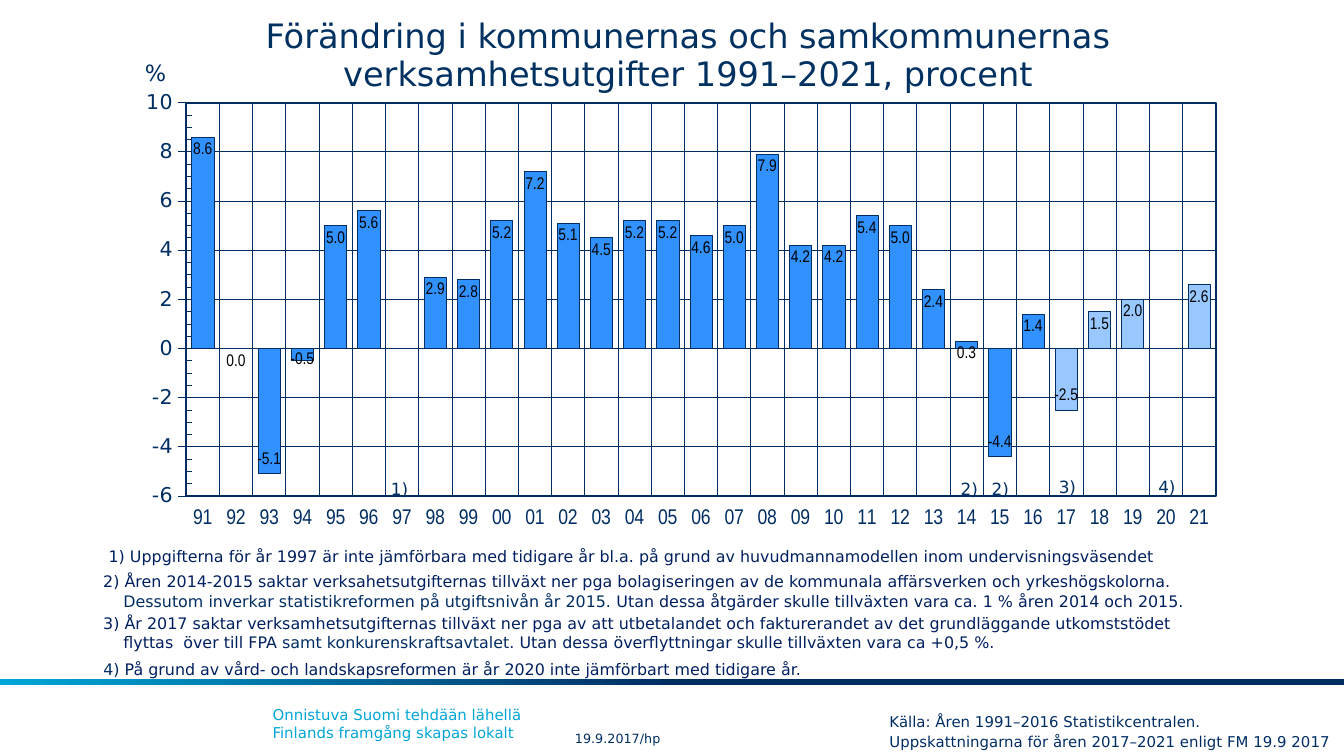
from typing import NamedTuple

from lxml import etree
from pptx import Presentation
from pptx.chart.data import CategoryChartData
from pptx.dml.color import RGBColor
from pptx.enum.chart import (XL_CHART_TYPE, XL_LABEL_POSITION,
                             XL_TICK_LABEL_POSITION, XL_TICK_MARK)
from pptx.enum.dml import MSO_LINE
from pptx.enum.shapes import MSO_SHAPE
from pptx.enum.text import MSO_ANCHOR, PP_ALIGN
from pptx.util import Inches, Pt

NAVY = RGBColor(0x00, 0x2E, 0x63)
INK = RGBColor(0x00, 0x20, 0x60)
TITLE = RGBColor(0x00, 0x31, 0x61)
CYAN = RGBColor(0x00, 0xA6, 0xD6)
BLUE = RGBColor(0x31, 0x91, 0xFF)
PALE = RGBColor(0x98, 0xC8, 0xFF)
BLACK = RGBColor(0, 0, 0)
SANS, NARROW = "DejaVu Sans", "Arial Narrow"

STACKED = XL_CHART_TYPE.COLUMN_STACKED
IN_END = XL_LABEL_POSITION.INSIDE_END
LOW = XL_TICK_LABEL_POSITION.LOW
OUT, INSIDE = XL_TICK_MARK.OUTSIDE, XL_TICK_MARK.INSIDE
DOT = MSO_LINE.ROUND_DOT
RECT = MSO_SHAPE.RECTANGLE
TOP, BOTTOM = MSO_ANCHOR.TOP, MSO_ANCHOR.BOTTOM
LEFT, CENTER = PP_ALIGN.LEFT, PP_ALIGN.CENTER

C = "http://schemas.openxmlformats.org/drawingml/2006/chart"
A = "http://schemas.openxmlformats.org/drawingml/2006/main"

YEARS = [f"{year % 100:02}" for year in range(1991, 2022)]
RATES = [8.6, 0, -5.1, -0.5, 5, 5.6, None, 2.9, 2.8, 5.2, 7.2, 5.1, 4.5, 5.2,
         5.2, 4.6, 5, 7.9, 4.2, 4.2, 5.4, 5, 2.4, 0.3, -4.4, 1.4, -2.5, 1.5,
         2, None, 2.6]
FORECAST = YEARS.index("17")


class Box(NamedTuple):
    x: float
    y: float
    w: float
    h: float


class Run(NamedTuple):
    text: str
    color: RGBColor = INK


class Note(NamedTuple):
    box: Box
    lines: list[list[Run]]
    anchor: MSO_ANCHOR = TOP


class Mark(NamedTuple):
    text: str
    x: float
    y: float = 3.51


MARKS = [Mark("1)", 2.81), Mark("2)", 7.05), Mark("2)", 7.28),
         Mark("3)", 7.78, 3.5), Mark("4)", 8.52, 3.5)]

NOTES = [
    Note(Box(0.71, 4.02, 8.72, 0.25), [
        [Run("1) Uppgifterna för år 1997 är inte jämförbara med tidigare år bl.a. "
             "på grund av huvudmannamodellen inom undervisningsväsendet")]]),
    Note(Box(0.67, 4.23, 8.86, 0.36), [
        [Run("2) Åren 2014-2015 saktar verksahetsutgifternas tillväxt ner pga "
             "bolagiseringen av de kommunala affärsverken och yrkeshögskolorna.")],
        [Run("Dessutom inverkar statistikreformen på utgiftsnivån år 2015. ", NAVY),
         Run("Utan dessa åtgärder skulle tillväxten vara ca. 1 % åren 2014 och 2015.")],
    ], BOTTOM),
    Note(Box(0.67, 4.54, 8.93, 0.36), [
        [Run("3) År 2017 saktar verksamhetsutgifternas tillväxt ner pga av att "
             "utbetalandet och fakturerandet av det grundläggande utkomststödet")],
        [Run("flyttas  över till FPA "), Run("samt konkurenskraftsavtalet. ", NAVY),
         Run("Utan dessa överflyttningar skulle tillväxten vara ca +0,5 %.")],
    ], BOTTOM),
    Note(Box(0.67, 4.86, 6.95, 0.25), [
        [Run("4) ", NAVY),
         Run("På grund av vård- och landskapsreformen är år 2020 inte jämförbart "
             "med tidigare år.")]]),
]


def place(box: Box) -> list[int]:
    return [Inches(side) for side in box]


def write(slide, box: Box, lines: list[list[Run]], *, size: float,
          align=LEFT, anchor=TOP, wrap: bool = True, space: float = 1,
          inset: bool = True, hang: float = 0) -> None:
    """Add a text box; hang indents every line after the first."""
    frame = slide.shapes.add_textbox(*place(box)).text_frame
    frame.word_wrap = wrap
    frame.vertical_anchor = anchor
    if not inset:
        frame.margin_left = frame.margin_right = 0
        frame.margin_top = frame.margin_bottom = 0
    for i, line in enumerate(lines):
        para = frame.add_paragraph() if i else frame.paragraphs[0]
        para.alignment = align
        para.line_spacing = space
        if i and hang:
            para._p.get_or_add_pPr().set("marL", str(Inches(hang)))
        for part in line:
            for j, text in enumerate(part.text.split("\n")):
                if j:
                    para.add_line_break()
                run = para.add_run()
                run.text = text
                style(run.font, size, SANS, part.color)


def style(font, size: float, name: str, color: RGBColor) -> None:
    font.size = Pt(size)
    font.name = name
    font.bold = False
    font.color.rgb = color


def rule(line) -> None:
    line.color.rgb = NAVY
    line.width = Pt(0.25)


def dress(axis, size: float, name: str) -> None:
    """Set the font, line, ticks and grid of an axis."""
    style(axis.tick_labels.font, size, name, NAVY)
    rule(axis.format.line)
    axis.major_tick_mark = OUT
    axis.has_major_gridlines = True
    grid = axis.major_gridlines.format.line
    rule(grid)
    grid.dash_style = DOT


def layout(**spots):
    """Build a manual layout element for a chart part."""
    body = "".join(f'<c:{tag} val="{val}"/>' for tag, val in spots.items())
    return etree.fromstring(f'<c:layout xmlns:c="{C}"><c:manualLayout>{body}'
                            '</c:manualLayout></c:layout>')


def frame_plot(chart) -> None:
    """Fix the inner plot area and draw its border."""
    area = chart._chartSpace.find(f".//{{{C}}}plotArea")
    for old in area.findall(f"{{{C}}}layout"):
        area.remove(old)
    area.insert(0, layout(layoutTarget="inner", xMode="edge", yMode="edge",
                          x=0.043, y=0.021, w=0.954, h=0.88))
    area.append(etree.fromstring(
        f'<c:spPr xmlns:c="{C}" xmlns:a="{A}"><a:noFill/><a:ln w="{Pt(1)}">'
        f'<a:solidFill><a:srgbClr val="{NAVY}"/></a:solidFill></a:ln></c:spPr>'))


def draw_chart(slide) -> None:
    data = CategoryChartData()
    data.categories = YEARS
    data.add_series("Series 1", RATES)
    box = Box(1.04, 0.67, 8.03, 3.35)
    chart = slide.shapes.add_chart(STACKED, *place(box), data).chart
    chart.has_legend = chart.has_title = False
    style(chart.font, 11, SANS, NAVY)

    years, rates = chart.category_axis, chart.value_axis
    dress(years, 11.5, NARROW)
    years.tick_label_position = LOW
    dress(rates, 11, SANS)
    rates.minimum_scale, rates.maximum_scale = -6, 10
    rates.major_unit, rates.minor_unit = 2, 0.5
    rates.minor_tick_mark = INSIDE

    plot = chart.plots[0]
    plot.gap_width, plot.overlap = 50, 100
    plot.vary_by_categories = False
    bars = plot.series[0]
    bars.invert_if_negative = False
    paint(bars.format, BLUE)
    for i in range(FORECAST, len(YEARS)):
        paint(bars.points[i].format, PALE)

    labels = bars.data_labels
    labels.show_value = True
    labels.position = IN_END
    labels.number_format = "0.0"
    labels.number_format_is_linked = False
    style(labels.font, 9, NARROW, BLACK)
    drop_label(bars, YEARS.index("94"))
    frame_plot(chart)


def drop_label(bars, spot: int) -> None:
    """Move the label of one bar down, clear of the zero line."""
    label = bars.points[spot].data_label
    style(label.font, 9, NARROW, BLACK)
    label.position = IN_END
    node = bars._element.find(f".//{{{C}}}dLbl")
    node.insert(1, layout(x=0, y=0.03))


def paint(form, color: RGBColor) -> None:
    form.fill.solid()
    form.fill.fore_color.rgb = color
    rule(form.line)


def draw_band(slide) -> None:
    band = slide.shapes.add_shape(RECT, *place(Box(0, 5.05, 10, 0.05)))
    band.shadow.inherit = False
    band.line.fill.background()
    band.fill.gradient()
    band.fill.gradient_angle = 180
    for stop, spot, color in zip(band.fill.gradient_stops, (0.5, 1), (NAVY, CYAN)):
        stop.position = spot
        stop.color.rgb = color


def main() -> None:
    deck = Presentation()
    deck.slide_width = Inches(10)
    deck.slide_height = deck.slide_width * 9 // 16
    slide = deck.slides.add_slide(deck.slide_layouts[6])

    draw_band(slide)
    write(slide, Box(1.93, 5.2, 6.54, 0.37),
          [[Run("Onnistuva Suomi tehdään lähellä\nFinlands framgång skapas lokalt",
                CYAN)]], size=8)
    draw_chart(slide)
    write(slide, Box(0.98, 0.39, 0.38, 0.3), [[Run("%", NAVY)]], size=12, wrap=False)
    for mark in MARKS:
        write(slide, Box(mark.x, mark.y, 0.34, 0.25), [[Run(mark.text, NAVY)]],
              size=9, wrap=False)
    write(slide, Box(4.18, 5.39, 0.94, 0.22), [[Run("19.9.2017/hp", NAVY)]], size=6.8)
    write(slide, Box(0.67, 0.13, 8.9, 0.58),
          [[Run("Förändring i kommunernas och samkommunernas "
                "verksamhetsutgifter 1991–2021, procent", TITLE)]],
          size=18, align=CENTER, space=0.95, inset=False)
    write(slide, Box(6.52, 5.22, 3.54, 0.41),
          [[Run("Källa: Åren 1991–2016 Statistikcentralen.", NAVY)],
           [Run("Uppskattningarna för åren 2017–2021 enligt FM 19.9 2017", NAVY)]],
          size=8, anchor=BOTTOM, space=1.1)
    for note in NOTES:
        write(slide, note.box, note.lines, size=8.5, anchor=note.anchor, hang=0.15)
    deck.save("out.pptx")


if __name__ == "__main__":
    main()
